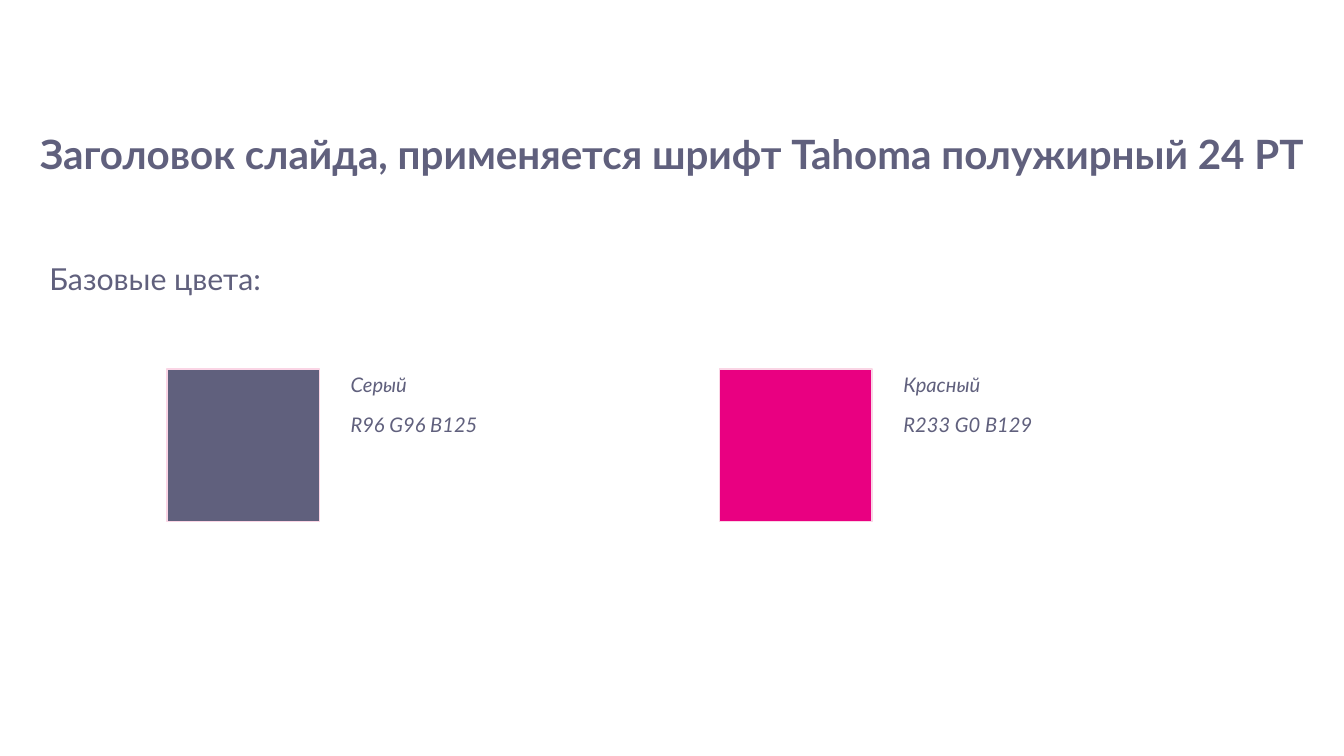
from pptx import Presentation
from pptx.dml.color import RGBColor
from pptx.enum.shapes import MSO_SHAPE
from pptx.enum.text import MSO_ANCHOR, PP_ALIGN
from pptx.util import Inches, Pt

FONT = "Lato"
GREY = RGBColor(96, 96, 125)
RED = RGBColor(233, 0, 129)
OUTLINE = RGBColor(0xFA, 0xD5, 0xE5)

# Swatch geometry in inches
SWATCH_TOP, SWATCH_SIZE = 3.05, 1.26
SWATCH_LEFT, SWATCH_STEP = 1.38, 4.57
LABEL_OFFSET, LABEL_WIDTH = 1.42, 2.76


def write_text(tf, *lines, size, bold=False, italic=False,
               align=PP_ALIGN.LEFT, anchor=MSO_ANCHOR.TOP):
    tf.word_wrap = True
    tf.vertical_anchor = anchor
    for i, line in enumerate(lines):
        p = tf.add_paragraph() if i else tf.paragraphs[0]
        p.alignment = align
        p.line_spacing = 0.9
        p.space_before = Pt(11.1 if i else 0)
        r = p.add_run()
        r.text = line
        r.font.name = FONT
        r.font.size = Pt(size)
        r.font.bold = bold
        r.font.italic = italic
        r.font.color.rgb = GREY


def add_title(s, text):
    sp = s.shapes.title
    sp.left, sp.top = Inches(0), Inches(1)
    sp.width, sp.height = Inches(11.11), Inches(0.59)
    tf = sp.text_frame
    tf.margin_left = tf.margin_right = Inches(0.05)
    tf.margin_top = tf.margin_bottom = Inches(0.05)
    write_text(tf, text, size=24, bold=True,
               align=PP_ALIGN.CENTER, anchor=MSO_ANCHOR.MIDDLE)


def add_text(s, left, top, width, height, *lines, **fmt):
    sp = s.shapes.add_textbox(Inches(left), Inches(top),
                              Inches(width), Inches(height))
    write_text(sp.text_frame, *lines, **fmt)


def add_swatch(s, left, color, name):
    sp = s.shapes.add_shape(MSO_SHAPE.RECTANGLE, Inches(left), Inches(SWATCH_TOP),
                            Inches(SWATCH_SIZE), Inches(SWATCH_SIZE))
    sp.shadow.inherit = False
    sp.fill.solid()
    sp.fill.fore_color.rgb = color
    sp.line.color.rgb = OUTLINE
    sp.line.width = Pt(0.75)
    red, green, blue = color
    add_text(s, left + LABEL_OFFSET, SWATCH_TOP, LABEL_WIDTH, SWATCH_SIZE,
             name, f"R{red} G{green} B{blue}", size=12, italic=True)


def main():
    prs = Presentation()
    prs.slide_width, prs.slide_height = Inches(11.11), Inches(6.25)
    s = prs.slides.add_slide(prs.slide_layouts[5])

    # Headings
    add_title(s, "Заголовок слайда, применяется шрифт Tahoma полужирный 24 PT")
    add_text(s, 0.31, 2.14, 10.5, 0.49, "Базовые цвета:", size=18)

    # Base colours with their labels
    for i, (color, name) in enumerate([(GREY, "Серый"), (RED, "Красный")]):
        add_swatch(s, SWATCH_LEFT + i * SWATCH_STEP, color, name)

    prs.save("out.pptx")


if __name__ == "__main__":
    main()
